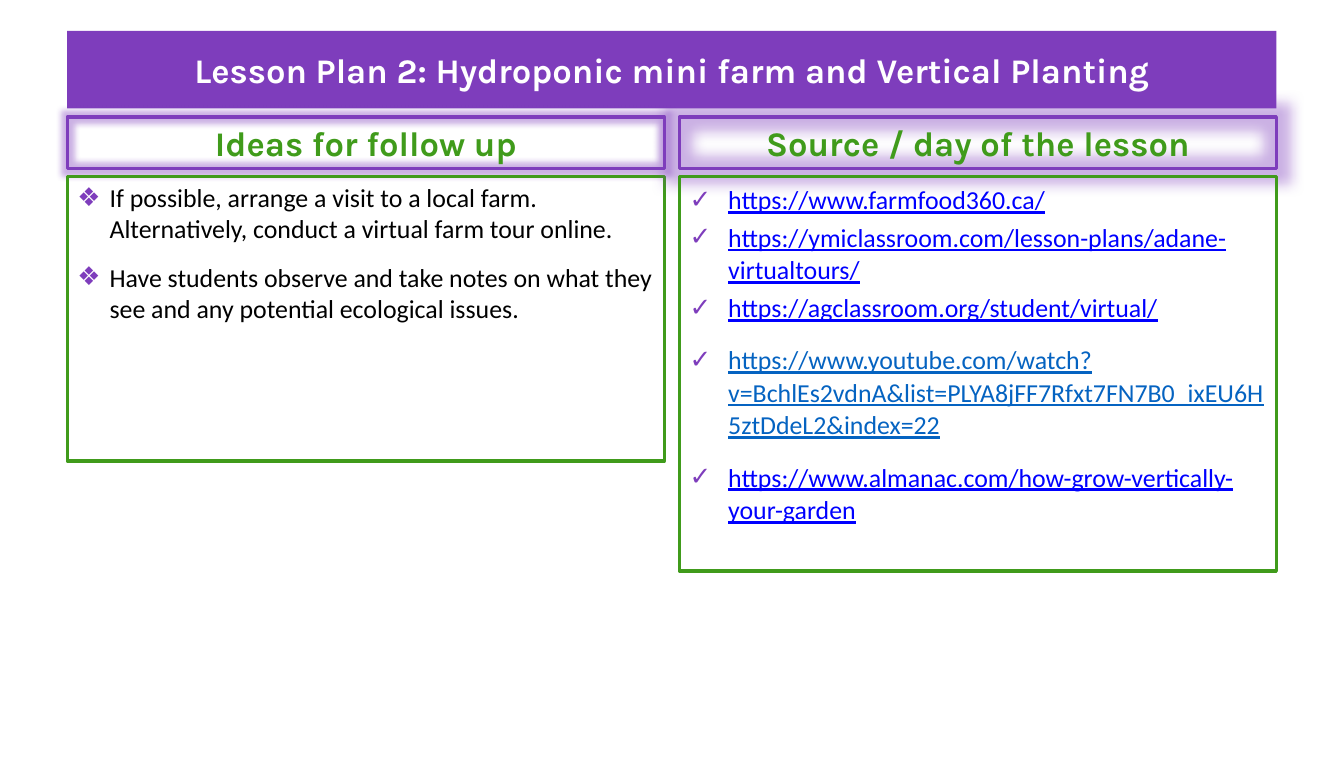
from lxml.etree import SubElement
from pptx import Presentation
from pptx.dml.color import RGBColor
from pptx.enum.text import MSO_ANCHOR, MSO_AUTO_SIZE, PP_ALIGN
from pptx.oxml.ns import qn
from pptx.util import Cm, Pt

COLORS = {
    "purple": "7E3DBC",
    "green": "409B1B",
    "white": "FFFFFF",
    "black": "000000",
    "link": "0000FF",
    "video_link": "0563C1",
}

# Layout grid, in centimetres
LEFT, FULL_WIDTH, COLUMN_WIDTH = 1.65, 29.69, 14.66
RIGHT = LEFT + FULL_WIDTH - COLUMN_WIDTH
HEADING_TOP, HEADING_HEIGHT = 2.87, 1.27
LIST_TOP = 4.34

FOLLOW_UP_IDEAS = [
    "If possible, arrange a visit to a local farm. Alternatively, conduct a virtual farm tour online.",
    "Have students observe and take notes on what they see and any potential ecological issues.",
]
# Address, colour, space after in points
SOURCES = [
    ("https://www.farmfood360.ca/", "link", 0),
    ("https://ymiclassroom.com/lesson-plans/adane-virtualtours/", "link", 0),
    ("https://agclassroom.org/student/virtual/", "link", 10),
    ("https://www.youtube.com/watch?v=BchlEs2vdnA&list=PLYA8jFF7Rfxt7FN7B0_ixEU6H5ztDdeL2&index=22",
     "video_link", 10),
    ("https://www.almanac.com/how-grow-vertically-your-garden", "link", 10),
]


def color(name):
    return RGBColor.from_string(COLORS[name])


def place(shape, left, top, width, height, anchor=MSO_ANCHOR.TOP):
    shape.left, shape.top = Cm(left), Cm(top)
    shape.width, shape.height = Cm(width), Cm(height)
    frame = shape.text_frame
    frame.word_wrap = True
    frame.auto_size = MSO_AUTO_SIZE.NONE
    frame.vertical_anchor = anchor
    frame.margin_left = frame.margin_right = Cm(0.25)
    frame.margin_top = frame.margin_bottom = Cm(0.13)


def outline(shape, color_name):
    shape.line.color.rgb = color(color_name)
    shape.line.width = Pt(2.25)


def add_glow(shape, radius):
    effects = SubElement(shape.element.spPr, qn("a:effectLst"))
    glow = SubElement(effects, qn("a:glow"), rad=str(Pt(radius)))
    glow_color = SubElement(glow, qn("a:srgbClr"), val=COLORS["purple"])
    SubElement(glow_color, qn("a:alpha"), val="40000")


def add_run(paragraph, text, font_name, size, color_name):
    run = paragraph.add_run()
    run.text = text
    run.font.name = font_name
    run.font.size = Pt(size)
    run.font.color.rgb = color(color_name)
    return run


def write_heading(shape, text, color_name):
    paragraph = shape.text_frame.paragraphs[0]
    paragraph.alignment = PP_ALIGN.CENTER
    paragraph.space_before = Pt(0)
    add_run(paragraph, text, "Karla", 24, color_name).font.bold = True


def column_heading(shape, text, left, glow_radius):
    place(shape, left, HEADING_TOP, COLUMN_WIDTH, HEADING_HEIGHT)
    outline(shape, "purple")
    add_glow(shape, glow_radius)
    write_heading(shape, text, "green")


def list_box(shape, left, height):
    place(shape, left, LIST_TOP, COLUMN_WIDTH, height)
    outline(shape, "green")


def add_item(shape, position, text, bullet, indent, color_name, before, after):
    frame = shape.text_frame
    paragraph = frame.add_paragraph() if position else frame.paragraphs[0]
    properties = paragraph._p.get_or_add_pPr()
    properties.set("marL", str(Cm(indent)))
    properties.set("indent", str(-Cm(indent)))
    bullet_color = SubElement(properties, qn("a:buClr"))
    SubElement(bullet_color, qn("a:srgbClr"), val=COLORS["purple"])
    SubElement(properties, qn("a:buChar"), char=bullet)
    paragraph.space_before = Pt(before if position else 0)
    paragraph.space_after = Pt(after)
    run = add_run(paragraph, text, "Calibri", 18, color_name)
    return paragraph, run


def main():
    presentation = Presentation()
    presentation.slide_width, presentation.slide_height = Cm(33), Cm(19.05)
    comparison_layout = presentation.slide_layouts[4]
    slide = presentation.slides.add_slide(comparison_layout)
    title, ideas_heading, ideas, sources_heading, sources = slide.placeholders

    # Title band
    place(title, LEFT, 0.76, FULL_WIDTH, 1.9, MSO_ANCHOR.MIDDLE)
    title.fill.solid()
    title.fill.fore_color.rgb = color("purple")
    write_heading(title, "Lesson Plan 2: Hydroponic mini farm and Vertical Planting", "white")

    # Follow-up ideas
    column_heading(ideas_heading, "Ideas for follow up", LEFT, 8)
    list_box(ideas, LEFT, 6.98)
    for position, idea in enumerate(FOLLOW_UP_IDEAS):
        add_item(ideas, position, idea, "❖", 0.79, "black", 6, 6)

    # Sources
    column_heading(sources_heading, "Source / day of the lesson", RIGHT, 18)
    list_box(sources, RIGHT, 9.68)
    for position, (address, color_name, after) in enumerate(SOURCES):
        paragraph, run = add_item(sources, position, address, "✓", 0.95, color_name, 3.6, after)
        paragraph.alignment = PP_ALIGN.JUSTIFY
        paragraph.line_spacing = 1.05
        run.font.underline = True

    presentation.save("out.pptx")


if __name__ == "__main__":
    main()
